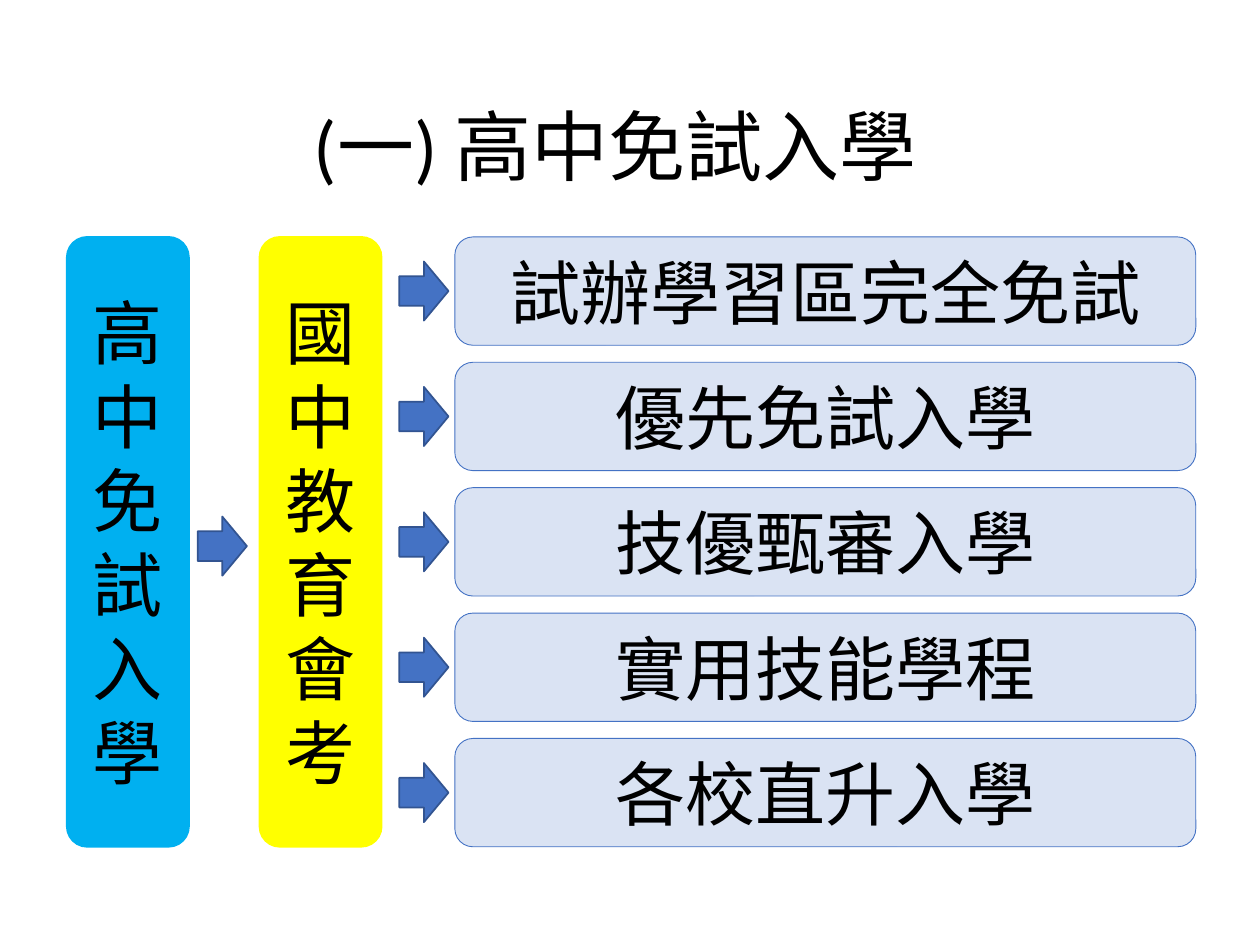
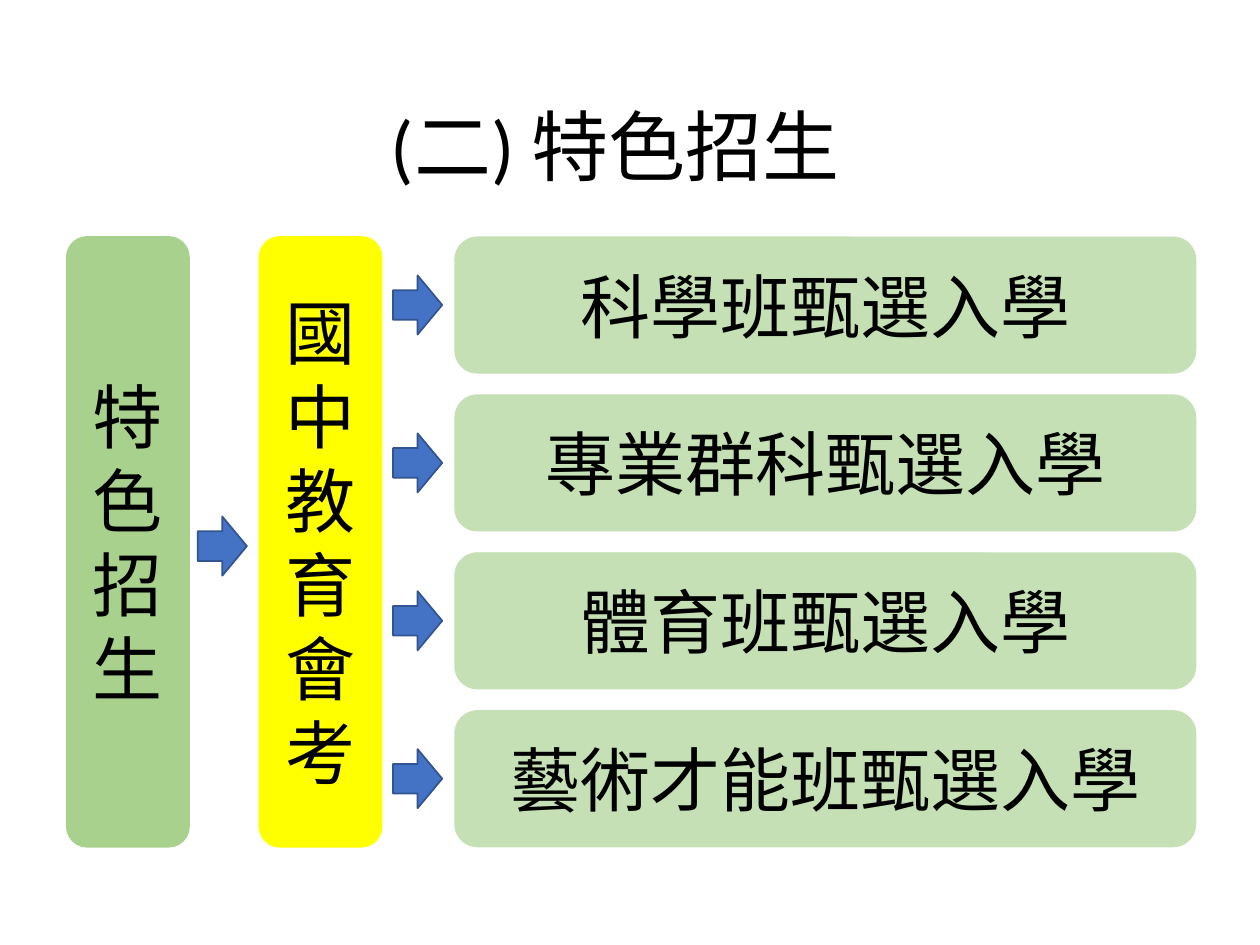
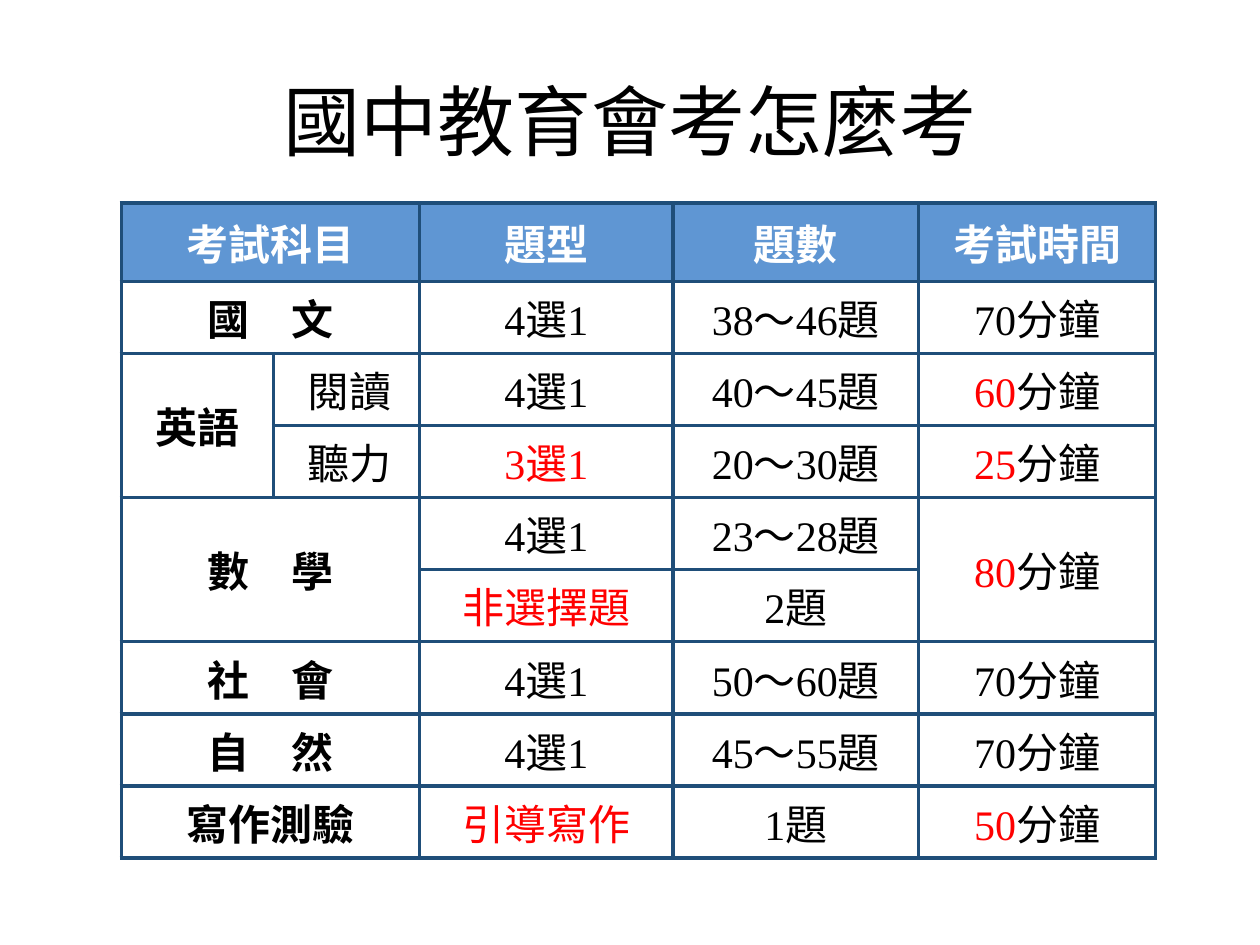
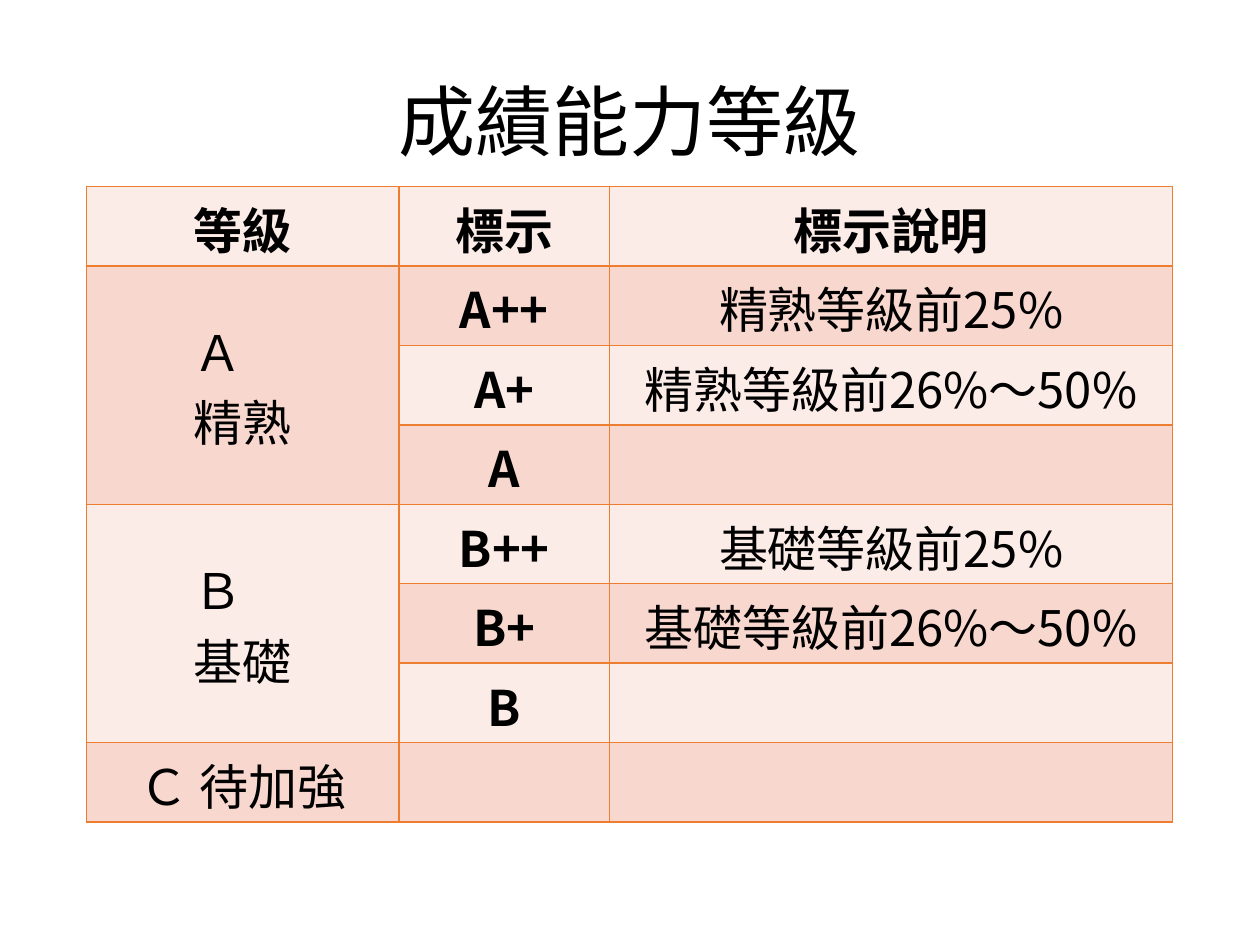
from dataclasses import dataclass
from typing import Any, NamedTuple, Optional

import lxml.etree
import pptx
import pptx.dml.color
import pptx.enum.shapes
import pptx.enum.text
import pptx.oxml.ns
import pptx.util

Pt = pptx.util.Pt
SHAPES = pptx.enum.shapes.MSO_SHAPE
ANCHOR = pptx.enum.text.MSO_ANCHOR
CENTER = pptx.enum.text.PP_ALIGN.CENTER

CJK_FONT = "Noto Sans CJK JP"
BLACK, WHITE, RED = "000000", "FFFFFF", "FF0000"
YELLOW, ARROW_FILL, ARROW_LINE = "FFFF00", "4472C4", "325491"
PALE, PINK = "FCECE8", "F8D7CE"

FLOW_TOP, FLOW_HEIGHT = 135.4, 348.5
PILLAR_WIDTH = 69.8
ARROW_WIDTH, ARROW_HEIGHT = 28.1, 33.8


class Box(NamedTuple):
    left: float
    top: float
    width: float
    height: float


class Run(NamedTuple):
    text: str
    color: str = BLACK


@dataclass
class TextStyle:
    size: float
    font: str = CJK_FONT
    bold: bool = False
    line_spacing: Optional[float] = None


@dataclass
class Cell:
    runs: tuple[Run, ...] = ()
    bold: bool = False
    rows: int = 1
    columns: int = 1
    fill: Optional[str] = None
    indent: float = 0
    anchor: Any = ANCHOR.MIDDLE


@dataclass
class TableDesign:
    left: float
    top: float
    columns: list[float]
    rows: list[float]
    border: str
    border_width: float
    size: float
    font: str
    margins: tuple[float, float]


@dataclass
class Flow:
    title: str
    source: str
    source_fill: str
    routes: list[str]
    route_height: float
    route_fill: str
    route_line: str
    arrow_left: float


FLOWS = [
    Flow("(一) 高中免試入學", "\n".join("高中免試入學"), "00B0F0",
         ["試辦學習區完全免試", "優先免試入學", "技優甄審入學", "實用技能學程", "各校直升入學"],
         61.9, "DAE3F3", "4472C4", 228.2),
    Flow("(二) 特色招生", "特色招生", "A9D18E",
         ["科學班甄選入學", "專業群科甄選入學", "體育班甄選入學", "藝術才能班甄選入學"],
         77.8, "C5E0B4", "C5E0B4", 224.6),
]


def rgb(value: str) -> pptx.dml.color.RGBColor:
    return pptx.dml.color.RGBColor.from_string(value)


def apply_format(target: Any, values: dict[str, Any]) -> None:
    for name, value in values.items():
        setattr(target, name, value)


def write_paragraphs(text_frame: Any, lines: list[tuple[Run, ...]], style: TextStyle) -> None:
    for index, runs in enumerate(lines):
        paragraph = text_frame.add_paragraph() if index else text_frame.paragraphs[0]
        apply_format(paragraph, {"alignment": CENTER, "line_spacing": style.line_spacing})
        for part in runs:
            run = paragraph.add_run()
            run.text = part.text
            apply_format(run.font, {"size": Pt(style.size), "name": style.font, "bold": style.bold})
            run.font.color.rgb = rgb(part.color)
            east_asian = pptx.oxml.ns.qn("a:ea")
            run.font._element.find(pptx.oxml.ns.qn("a:latin")).addnext(
                lxml.etree.Element(east_asian, typeface=CJK_FONT))


def split_lines(text: str) -> list[tuple[Run, ...]]:
    return [(Run(line),) for line in text.split("\n")]


def add_title(slide: Any, text: str, box: Box) -> None:
    shape = slide.shapes.add_textbox(*map(Pt, box))
    apply_format(shape.text_frame, {"word_wrap": True, "vertical_anchor": ANCHOR.MIDDLE})
    write_paragraphs(shape.text_frame, split_lines(text), TextStyle(44, "Calibri", line_spacing=0.9))


def add_block(slide: Any, kind: Any, box: Box, fill: str, line: str,
              line_width: float, text: str = "") -> None:
    shape = slide.shapes.add_shape(kind, *map(Pt, box))
    shape.shadow.inherit = False
    shape.fill.solid()
    shape.fill.fore_color.rgb = rgb(fill)
    shape.line.color.rgb = rgb(line)
    shape.line.width = Pt(line_width)
    if text:
        apply_format(shape.text_frame, {"word_wrap": True, "vertical_anchor": ANCHOR.MIDDLE})
        write_paragraphs(shape.text_frame, split_lines(text), TextStyle(40))


def add_arrow(slide: Any, left: float, middle: float) -> None:
    box = Box(left, middle - ARROW_HEIGHT / 2, ARROW_WIDTH, ARROW_HEIGHT)
    add_block(slide, SHAPES.RIGHT_ARROW, box, ARROW_FILL, ARROW_LINE, 1)


def add_flow_slide(slide: Any, flow: Flow) -> None:
    add_title(slide, flow.title, Box(126.7, 28.8, 450, 114.5))
    pillars = [(38.2, flow.source_fill, flow.source), (148.3, YELLOW, "國中教育會考")]
    for left, fill, text in pillars:
        box = Box(left, FLOW_TOP, PILLAR_WIDTH, FLOW_HEIGHT)
        add_block(slide, SHAPES.ROUNDED_RECTANGLE, box, fill, fill, 1, text)
    add_arrow(slide, 113, 312.1)
    pitch = (FLOW_HEIGHT - flow.route_height) / (len(flow.routes) - 1)
    for index, route in enumerate(flow.routes):
        box = Box(259.9, FLOW_TOP + index * pitch, 423.4, flow.route_height)
        add_block(slide, SHAPES.ROUNDED_RECTANGLE, box, flow.route_fill, flow.route_line, 0.5, route)
        add_arrow(slide, flow.arrow_left, box.top + box.height / 2)


def set_borders(cell: Any, color: str, width: float) -> None:
    properties = cell._tc.get_or_add_tcPr()
    qn = pptx.oxml.ns.qn
    for side in ("a:lnL", "a:lnR", "a:lnT", "a:lnB"):
        line = lxml.etree.SubElement(properties, qn(side), w=str(int(Pt(width))))
        solid = lxml.etree.SubElement(line, qn("a:solidFill"))
        lxml.etree.SubElement(solid, qn("a:srgbClr"), val=color)


def add_table(slide: Any, design: TableDesign, grid: list[list[Optional[Cell]]]) -> None:
    box = Box(design.left, design.top, sum(design.columns), sum(design.rows))
    frame = slide.shapes.add_table(len(design.rows), len(design.columns), *map(Pt, box))
    table = frame.table
    apply_format(table, {"first_row": False, "horz_banding": False})
    for column, width in zip(table.columns, design.columns):
        column.width = Pt(width)
    for row, height in zip(table.rows, design.rows):
        row.height = Pt(height)
    for row_index, row_cells in enumerate(grid):
        for column_index, content in enumerate(row_cells):
            cell = table.cell(row_index, column_index)
            set_borders(cell, design.border, design.border_width)
            if content is None:
                continue
            fill_cell(cell, content, design)
            if content.rows > 1 or content.columns > 1:
                cell.merge(table.cell(row_index + content.rows - 1,
                                      column_index + content.columns - 1))


def fill_cell(cell: Any, content: Cell, design: TableDesign) -> None:
    side, edge = (0, 0) if content.indent else design.margins
    apply_format(cell, {"margin_left": Pt(side), "margin_right": Pt(side), "margin_top": Pt(edge),
                        "margin_bottom": Pt(edge), "vertical_anchor": content.anchor})
    if content.fill:
        cell.fill.solid()
        cell.fill.fore_color.rgb = rgb(content.fill)
    else:
        cell.fill.background()
    lines = [(Run(line, run.color),) for run in content.runs for line in run.text.split("\n")]
    if len(content.runs) > 1:
        lines = [content.runs]
    write_paragraphs(cell.text_frame, lines, TextStyle(design.size, design.font, content.bold))
    if content.indent:
        paragraph = cell.text_frame.paragraphs[0]
        properties = paragraph._p.get_or_add_pPr()
        properties.set("marL", str(int(Pt(content.indent))))
        properties.set("indent", "0")


def plain(text: str, color: str = BLACK) -> Cell:
    return Cell((Run(text, color),))


def subject(text: str, rows: int = 1, columns: int = 2) -> Cell:
    return Cell((Run(text),), True, rows, columns)


def skill(text: str) -> Cell:
    return Cell((Run(text),), indent=3.6)


def heading(text: str, columns: int = 1) -> Cell:
    return Cell((Run(text, WHITE),), True, columns=columns, fill="5F96D3")


def minutes(number: str, color: str = RED, rows: int = 1) -> Cell:
    runs = (Run(number, color), Run("分鐘")) if color != BLACK else (Run(number + "分鐘"),)
    return Cell(runs, rows=rows)


def add_exam_slide(slide: Any) -> None:
    add_title(slide, "國中教育會考怎麼考", Box(49.5, 19.4, 621, 104.4))
    design = TableDesign(69.3, 115.9, [87.1, 83.5, 144.7, 140.4, 135.4], [44.9] + [41.2] * 8,
                         "1F4E79", 2.25, 24, "Times New Roman", (1.4, 1.4))
    four, seventy = plain("4選1"), minutes("70", BLACK)
    add_table(slide, design, [
        [heading("考試科目", 2), None, heading("題型"), heading("題數"), heading("考試時間")],
        [subject("國　文"), None, four, plain("38～46題"), seventy],
        [subject("英語", 2, 1), skill("閱讀"), four, plain("40～45題"), minutes("60")],
        [None, skill("聽力"), plain("3選1", RED), plain("20～30題"), minutes("25")],
        [subject("數　學", 2), None, four, plain("23～28題"), minutes("80", rows=2)],
        [None, None, plain("非選擇題", RED), plain("2題"), None],
        [subject("社　會"), None, four, plain("50～60題"), seventy],
        [subject("自　然"), None, four, plain("45～55題"), seventy],
        [subject("寫作測驗"), None, plain("引導寫作", RED), plain("1題"), minutes("50")],
    ])


def add_grade_slide(slide: Any) -> None:
    add_title(slide, "成績能力等級", Box(49.5, 19.4, 621, 104.4))
    design = TableDesign(49.5, 106.6, [178.6, 120.2, 321.8], [45.4] * 8,
                         "ED7D31", 1, 28, CJK_FONT, (7.2, 3.6))
    rows = [["等級", "標示", "標示說明"]]
    for level, grade, name in (("Ａ", "A", "精熟"), ("Ｂ", "B", "基礎")):
        rows += [[f"{level}　\n{name}", f"{grade}++", f"{name}等級前25%"],
                 [None, f"{grade}+", f"{name}等級前26%～50%"],
                 [None, grade, ""]]
    rows.append(["Ｃ 待加強", "", ""])
    grid = []
    for row_index, texts in enumerate(rows):
        cells = []
        for column_index, text in enumerate(texts):
            if text is None:
                cells.append(None)
                continue
            merged = "\n" in text
            cells.append(Cell((Run(text),) if text else (),
                              bold=row_index == 0 or column_index == 1,
                              rows=3 if merged else 1,
                              fill=PINK if row_index % 2 else PALE,
                              anchor=ANCHOR.MIDDLE if merged else ANCHOR.TOP))
        grid.append(cells)
    add_table(slide, design, grid)


def main() -> None:
    presentation = pptx.Presentation()
    apply_format(presentation, {"slide_width": Pt(720), "slide_height": Pt(540)})
    blank = presentation.slide_layouts[6]
    for flow in FLOWS:
        add_flow_slide(presentation.slides.add_slide(blank), flow)
    for build in (add_exam_slide, add_grade_slide):
        build(presentation.slides.add_slide(blank))
    presentation.save("out.pptx")


if __name__ == "__main__":
    main()
